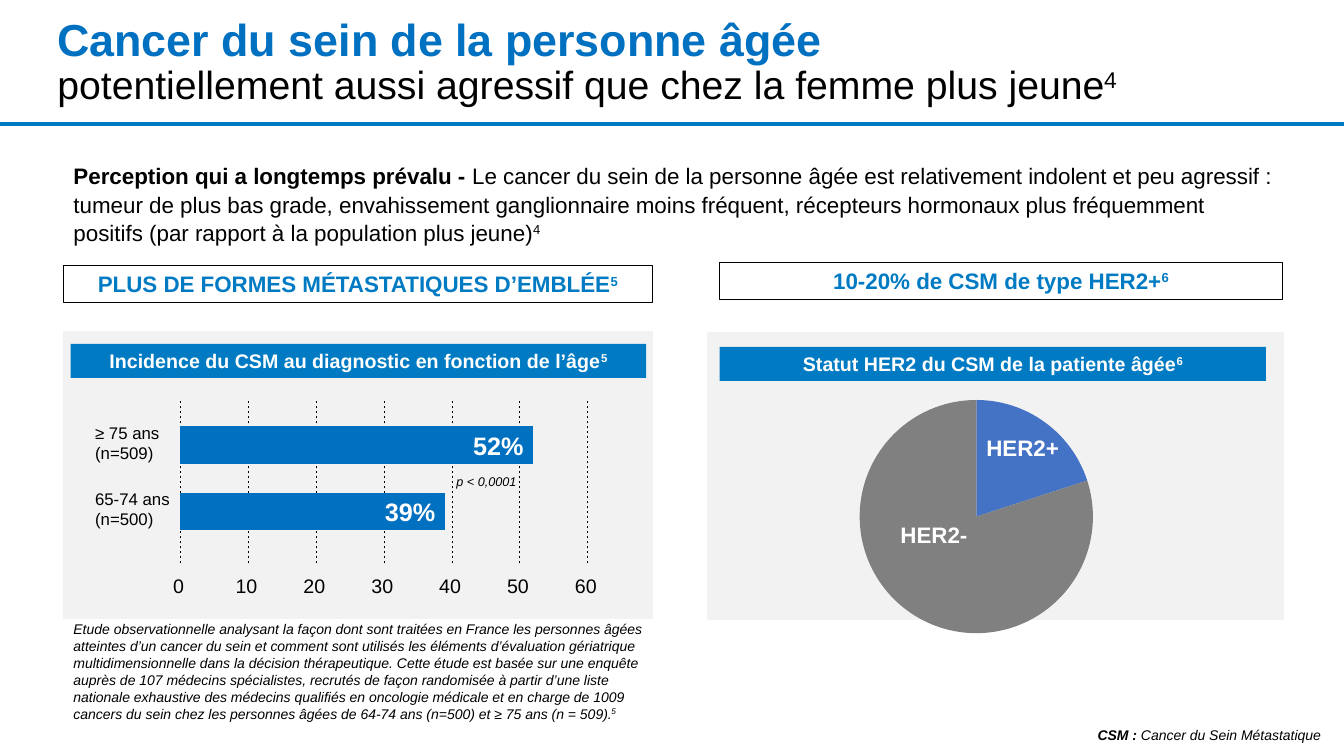
from lxml import etree
from pptx import Presentation
from pptx.chart.data import CategoryChartData
from pptx.dml.color import RGBColor
from pptx.enum.chart import XL_CHART_TYPE
from pptx.enum.dml import MSO_LINE
from pptx.enum.shapes import MSO_CONNECTOR, MSO_SHAPE
from pptx.enum.text import MSO_ANCHOR, PP_ALIGN
from pptx.oxml.ns import qn
from pptx.util import Inches, Pt

LEFT, CENTER, RIGHT = PP_ALIGN.LEFT, PP_ALIGN.CENTER, PP_ALIGN.RIGHT
TOP, MIDDLE = MSO_ANCHOR.TOP, MSO_ANCHOR.MIDDLE
RECTANGLE, PROCESS = MSO_SHAPE.RECTANGLE, MSO_SHAPE.FLOWCHART_PROCESS
STRAIGHT, DASH, PIE = MSO_CONNECTOR.STRAIGHT, MSO_LINE.DASH, XL_CHART_TYPE.PIE

WIDTH, HEIGHT = Inches(13.33), Inches(7.5)
BLUE, BAR_BLUE, PANEL_GREY = "007BC3", "0070C0", "F2F2F2"
BLACK, WHITE = "000000", "FFFFFF"

AXIS_LEFT, AXIS_STEP = 13.43, 5.05
GRID_TOP, GRID_BOTTOM = 53.07, 74.53
TICKS = range(0, 70, 10)
AGE_GROUPS = [("≥ 75 ans (n=509)", 52), ("65-74 ans (n=500)", 39)]
BAR_TOP, BAR_PITCH, BAR_HEIGHT = 56.4, 8.8, 4.93

PERCEPTION = (
    "Le cancer du sein de la personne âgée est relativement indolent et peu agressif\u00a0: "
    "tumeur de plus bas grade, envahissement ganglionnaire moins fréquent, récepteurs "
    "hormonaux plus fréquemment positifs (par rapport à la population plus jeune)"
)
STUDY = (
    "Etude observationnelle analysant la façon dont sont traitées en France les personnes "
    "âgées atteintes d’un cancer du sein et comment sont utilisés les éléments d’évaluation "
    "gériatrique multidimensionnelle dans la décision thérapeutique. Cette étude est basée "
    "sur une enquête auprès de 107 médecins spécialistes, recrutés de façon randomisée à "
    "partir d’une liste nationale exhaustive des médecins qualifiés en oncologie médicale et "
    "en charge de 1009 cancers du sein chez les personnes âgées de 64-74 ans (n=500) et "
    "≥ 75 ans (n = 509)."
)


def color(hex_string):
    return RGBColor.from_string(hex_string)


def across(share):
    return round(WIDTH * share / 100)


def down(share):
    return round(HEIGHT * share / 100)


def place(box):
    left, top, width, height = box
    return across(left), down(top), across(width), down(height)


def add_run(paragraph, text, size, hex_string, bold=False, italic=False, raised=False):
    run = paragraph.add_run()
    run.text = text
    font = run.font
    font.name, font.size, font.bold, font.italic = "Arial", Pt(size), bold, italic
    font.color.rgb = color(hex_string)
    if raised:
        run._r.get_or_add_rPr().set("baseline", "30000")


def write(holder, text, size, hex_string=BLACK, note=None, lead=None,
          align=LEFT, anchor=TOP, bold=False, italic=False):
    frame = holder.text_frame
    frame.word_wrap = True
    frame.vertical_anchor = anchor
    paragraph = frame.paragraphs[0]
    paragraph.alignment = align
    if lead:
        add_run(paragraph, lead, size, hex_string, True, italic)
    add_run(paragraph, text, size, hex_string, bold, italic)
    if note:
        add_run(paragraph, note, size, hex_string, bold, italic, True)
    return paragraph


def add_label(slide, box, text, size, **style):
    return write(slide.shapes.add_textbox(*place(box)), text, size, **style)


def add_block(slide, box, fill=None, line=None, line_width=1, preset=RECTANGLE):
    block = slide.shapes.add_shape(preset, *place(box))
    block.shadow.inherit = False
    if fill:
        block.fill.solid()
        block.fill.fore_color.rgb = color(fill)
    else:
        block.fill.background()
    if line:
        block.line.color.rgb = color(line)
        block.line.width = Pt(line_width)
    else:
        block.line.fill.background()
    return block


def add_rule(slide, start, end, hex_string, width, dash=None):
    rule = slide.shapes.add_connector(
        STRAIGHT, across(start[0]), down(start[1]), across(end[0]), down(end[1]))
    rule.line.color.rgb = color(hex_string)
    rule.line.width = Pt(width)
    if dash:
        rule.line.dash_style = dash
    etree.SubElement(rule._element.spPr, qn("a:effectLst"))


def add_title(slide):
    title = slide.shapes.add_textbox(*place((3.53, 2, 93.68, 12.67)))
    paragraph = write(title, "Cancer du sein de la personne âgée", 32, BAR_BLUE,
                      anchor=MIDDLE, bold=True)
    paragraph.line_spacing = 0.9
    paragraph.add_line_break()
    add_run(paragraph, "potentiellement aussi agressif que chez la femme plus jeune", 28, BLACK)
    add_run(paragraph, "4", 28, BLACK, raised=True)
    add_rule(slide, (0, 16.4), (100, 16.4), BLUE, 2.25)


def add_panel(slide, panel, heading, banner, heading_text, banner_text, note):
    add_block(slide, panel, PANEL_GREY, PANEL_GREY)
    write(add_block(slide, banner, BLUE), banner_text, 14, WHITE, note,
          align=CENTER, anchor=MIDDLE, bold=True)
    write(add_block(slide, heading, line=BLACK, line_width=0.75), heading_text, 16, BLUE, note,
          align=CENTER, anchor=MIDDLE, bold=True)


def add_incidence_bars(slide):
    for tick in TICKS:
        x = AXIS_LEFT + AXIS_STEP * tick / 10
        add_rule(slide, (x, GRID_BOTTOM), (x, GRID_TOP), BLACK, 0.5, DASH)
        add_label(slide, (x - 2.2, 75.2, 4.13, 4.53), str(tick), 14, align=CENTER)
    for row, (age_group, share) in enumerate(AGE_GROUPS):
        top = BAR_TOP + BAR_PITCH * row
        box = (AXIS_LEFT, top, AXIS_STEP * share / 10, BAR_HEIGHT)
        write(add_block(slide, box, BAR_BLUE, preset=PROCESS), f"{share}%", 18, WHITE,
              align=RIGHT, anchor=MIDDLE, bold=True)
        add_label(slide, (6.34, top - 1.2, 7.2, 6.67), age_group, 12)
    add_label(slide, (33.23, 62, 7.58, 3.33), "p < 0,0001", 9, italic=True)


def add_status_pie(slide):
    statuses = CategoryChartData()
    statuses.categories = ["HER2+", "HER2-"]
    statuses.add_series("Series 1", (20, 80))
    pie = slide.shapes.add_chart(PIE, *place((57.08, 51.07, 31.13, 34.53)), statuses).chart
    pie.has_legend = False
    pie.has_title = False
    pie.font.name, pie.font.size = "Calibri", Pt(10)
    pie.font.color.rgb = color(BLACK)
    plot = pie.plots[0]
    plot.vary_by_categories = True
    for index, hex_string in enumerate(("4472C4", "808080")):
        slice_fill = plot.series[0].points[index].format.fill
        slice_fill.solid()
        slice_fill.fore_color.rgb = color(hex_string)
    for status, left, top in (("HER2+", 71.85, 56.8), ("HER2-", 65.25, 68.27)):
        add_label(slide, (left, top, 8.48, 4.93), status, 16, hex_string=WHITE,
                  align=CENTER, bold=True)


def main():
    deck = Presentation()
    deck.slide_width, deck.slide_height = WIDTH, HEIGHT
    slide = deck.slides.add_slide(deck.slide_layouts[6])
    add_title(slide)
    perception = add_label(slide, (4.73, 20.67, 90.68, 13.73), PERCEPTION, 16, note="4",
                           lead="Perception qui a longtemps prévalu - ")
    perception.line_spacing = 1.05
    add_panel(slide, (4.73, 43.87, 43.8, 37.87), (4.73, 35.07, 43.8, 4.93),
              (5.25, 45.47, 42.83, 4.53), "PLUS DE FORMES MÉTASTATIQUES D’EMBLÉE",
              "Incidence du CSM au diagnostic en fonction de l’âge", "5")
    add_incidence_bars(slide)
    add_panel(slide, (52.65, 44, 42.83, 37.87), (53.55, 34.67, 41.85, 4.93),
              (53.55, 45.87, 40.65, 4.53), "10-20% de CSM de type HER2+",
              "Statut HER2 du CSM de la patiente âgée", "6")
    add_status_pie(slide)
    study = add_block(slide, (4.73, 81.47, 43.8, 14.67), preset=PROCESS)
    write(study, STUDY, 10, note="5", anchor=MIDDLE, italic=True)
    add_label(slide, (68.48, 95.47, 30.53, 3.6), "Cancer du Sein Métastatique", 10,
              lead="CSM : ", align=RIGHT, italic=True)
    deck.save("out.pptx")


if __name__ == "__main__":
    main()
